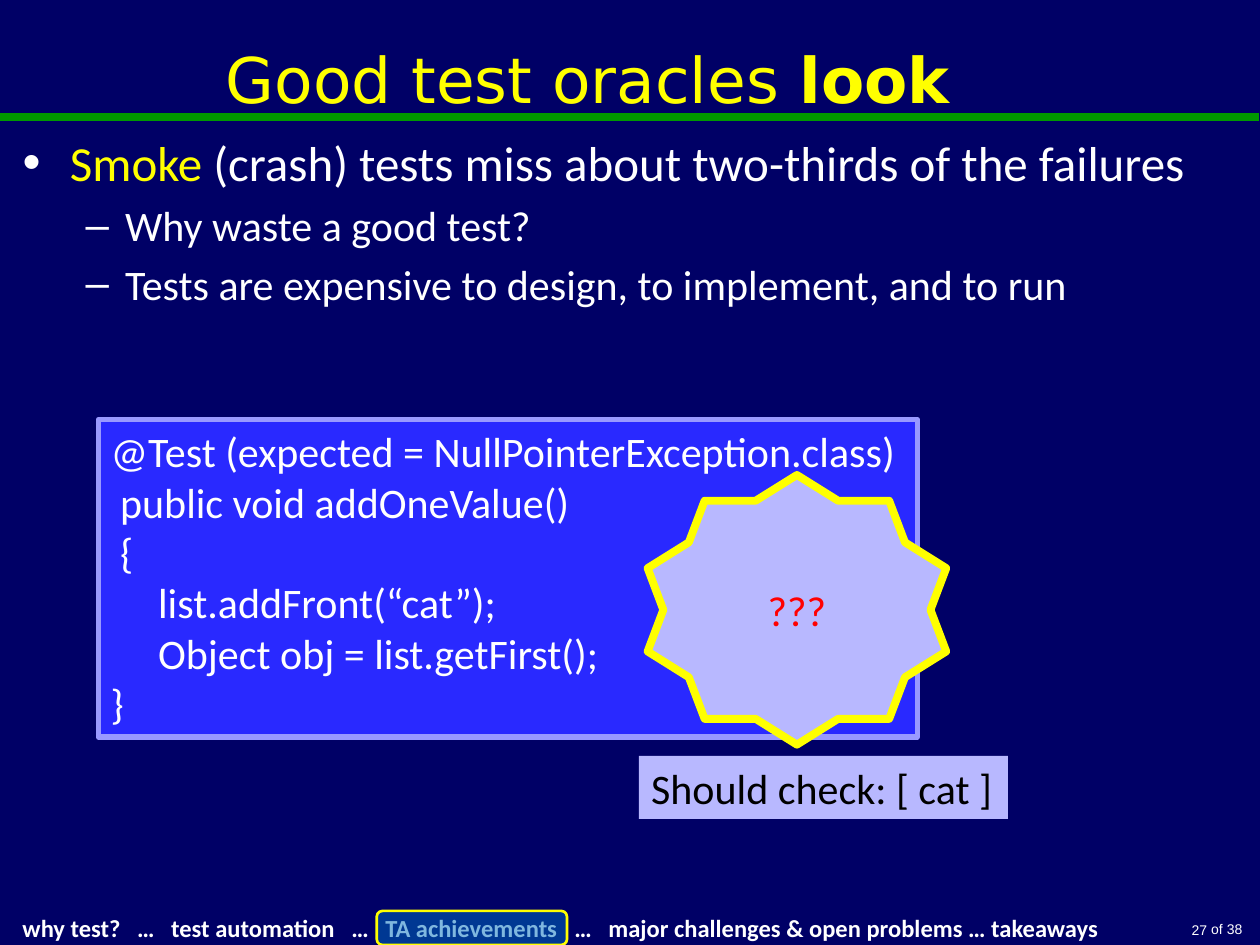
from dataclasses import dataclass

from lxml import etree
from pptx import Presentation
from pptx.dml.color import RGBColor
from pptx.enum.shapes import MSO_CONNECTOR, MSO_SHAPE
from pptx.enum.text import MSO_ANCHOR, MSO_AUTO_SIZE, PP_ALIGN
from pptx.oxml.ns import qn
from pptx.util import Inches, Pt

RECT, ROUND, STAR = MSO_SHAPE.RECTANGLE, MSO_SHAPE.ROUNDED_RECTANGLE, MSO_SHAPE.STAR_10_POINT
STRAIGHT = MSO_CONNECTOR.STRAIGHT
TOP, MIDDLE, BOTTOM = MSO_ANCHOR.TOP, MSO_ANCHOR.MIDDLE, MSO_ANCHOR.BOTTOM
LEFT, CENTER, RIGHT = PP_ALIGN.LEFT, PP_ALIGN.CENTER, PP_ALIGN.RIGHT
FIXED = MSO_AUTO_SIZE.NONE
COLS, ROWS = 100, 75


@dataclass(frozen=True)
class Theme:
    back: str = "000066"
    text: str = "FFFFFF"
    dark: str = "000000"
    accent: str = "FFFF00"
    rule: str = "009900"
    code: str = "2929FF"
    code_edge: str = "9999FF"
    note: str = "B8B8FF"
    alert: str = "FF0000"
    marker: str = "0070C0"
    title_font: str = "DejaVu Sans"
    body_font: str = "Calibri"
    page_font: str = "Arial"
    title_size: int = 36
    lead_size: int = 28
    body_size: int = 24
    nav_size: int = 14
    page_size: int = 8


class Deck:
    def __init__(self, prs, theme):
        self.prs, self.theme = prs, theme
        self.s = prs.slides.add_slide(prs.slide_layouts[1])
        fill = self.s.background.fill
        fill.solid()
        fill.fore_color.rgb = RGBColor.from_string(theme.back)

    def grid(self, x, y, w, h):
        dx, dy = self.prs.slide_width / COLS, self.prs.slide_height / ROWS
        return int(x * dx), int(y * dy), int(w * dx), int(h * dy)

    def run(self, p, text, size, color=None, font=None, bold=False):
        r = p.add_run()
        r.text = text
        r.font.size, r.font.bold = Pt(size), bold
        r.font.name = font or self.theme.body_font
        r.font.color.rgb = RGBColor.from_string(color or self.theme.text)

    def frame(self, sp, anchor=TOP, wrap=True):
        tf = sp.text_frame
        tf.word_wrap, tf.auto_size, tf.vertical_anchor = wrap, FIXED, anchor
        return tf

    def lines(self, sp, texts, size, color=None, font=None, bold=False,
              align=LEFT, anchor=TOP, wrap=True):
        tf = self.frame(sp, anchor, wrap)
        for i, text in enumerate(texts):
            p = tf.add_paragraph() if i else tf.paragraphs[0]
            p.alignment = align
            self.run(p, text, size, color, font, bold)
        return tf

    def place(self, sp, box):
        sp.left, sp.top, sp.width, sp.height = self.grid(*box)

    def title(self, box, runs):
        t, sp = self.theme, self.s.shapes.title
        self.place(sp, box)
        p = self.frame(sp, MIDDLE).paragraphs[0]
        p.alignment = CENTER
        for text, bold in runs:
            self.run(p, text, t.title_size, t.accent, t.title_font, bold)

    def bullets(self, box, lead, items):
        t, sp = self.theme, self.s.placeholders[1]
        self.place(sp, box)
        tf = self.frame(sp)
        p = tf.paragraphs[0]
        p.space_before = Pt(0)
        pPr = p._p.get_or_add_pPr()
        color = etree.SubElement(pPr, qn("a:buClr"))
        etree.SubElement(color, qn("a:srgbClr"), val=t.text)
        etree.SubElement(pPr, qn("a:buSzPct"), val="105000")
        for text, color in lead:
            self.run(p, text, t.lead_size, color)
        for item in items:
            p = tf.add_paragraph()
            p.level = 1
            self.run(p, item, t.body_size)

    def rule(self, x1, x2, y, color, width):
        left, top, right, _ = self.grid(x1, y, x2, 0)
        ln = self.s.shapes.add_connector(STRAIGHT, left, top, right, top)
        ln.line.color.rgb = RGBColor.from_string(color)
        ln.line.width = Pt(width)
        etree.SubElement(ln._element.spPr, qn("a:effectLst"))

    def label(self, box, text, size, **style):
        sp = self.s.shapes.add_textbox(*self.grid(*box))
        return self.lines(sp, [text], size, **style)

    def nav(self, box, text, stops):
        tf = self.label(box, text, self.theme.nav_size, bold=True)
        pPr = tf.paragraphs[0]._p.get_or_add_pPr()
        tabs = etree.SubElement(pPr, qn("a:tabLst"))
        for stop in stops:
            etree.SubElement(tabs, qn("a:tab"), pos=str(Inches(stop)), algn="l")

    def shape(self, kind, box, fill, edge=None, width=0, alpha=None):
        sp = self.s.shapes.add_shape(kind, *self.grid(*box))
        sp.shadow.inherit = False
        sp.fill.solid()
        sp.fill.fore_color.rgb = RGBColor.from_string(fill)
        if alpha:
            color = sp._element.spPr.find(qn("a:solidFill"))[0]
            etree.SubElement(color, qn("a:alpha"), val=str(alpha * 1000))
        if edge:
            sp.line.color.rgb = RGBColor.from_string(edge)
            sp.line.width = Pt(width)
        else:
            sp.line.fill.background()
        return sp


def main():
    prs = Presentation()
    prs.slide_width, prs.slide_height = Inches(10), Inches(7.5)
    t = Theme()
    d = Deck(prs, t)

    d.rule(0, 99.9, 9.3, t.rule, 4.5)
    page = dict(font=t.page_font, align=RIGHT)
    d.label((95, 72.6, 4.6, 2.4), "of 38", t.page_size, **page)
    d.nav((0.8, 72, 87.5, 3.4),
          "why test?\t…\ttest automation\t…\tTA achievements\t…\t"
          "major challenges & open problems … takeaways",
          (0.91, 1.18, 2.61, 2.88, 4.38, 4.65))

    d.title((0.8, 0, 91.7, 12.5), [("Good test oracles ", False), ("look", True)])
    d.bullets((0.8, 10, 98.3, 25),
              [("Smoke", t.accent),
               (" (crash) tests miss about two-thirds of the failures", t.text)],
              ["Why waste a good test?",
               "Tests are expensive to design, to implement, and to run"])
    d.label((78.7, 72.3, 18.1, 2.7), "27", t.page_size, anchor=BOTTOM, **page)

    code = d.shape(RECT, (7.8, 33.3, 65, 25.2), t.code, t.code_edge, 3)
    d.lines(code, ["@Test (expected = NullPointerException.class)",
                   " public void addOneValue()",
                   " {",
                   "     list.addFront(“cat”);",
                   "     Object obj = list.getFirst();",
                   "}"], t.body_size)
    star = d.shape(STAR, (51.4, 37.7, 23.7, 21.4), t.note, t.accent, 4.5)
    d.lines(star, ["???"], t.body_size, t.alert, align=CENTER, anchor=MIDDLE)
    check = d.shape(RECT, (50.7, 60, 29.3, 5), t.note)
    d.lines(check, ["Should check: [ cat ]"], t.body_size, t.dark, wrap=False)
    d.shape(ROUND, (29.9, 72.3, 15.1, 2.7), t.marker, t.accent, 1.5, alpha=50)

    prs.save("out.pptx")


if __name__ == "__main__":
    main()
